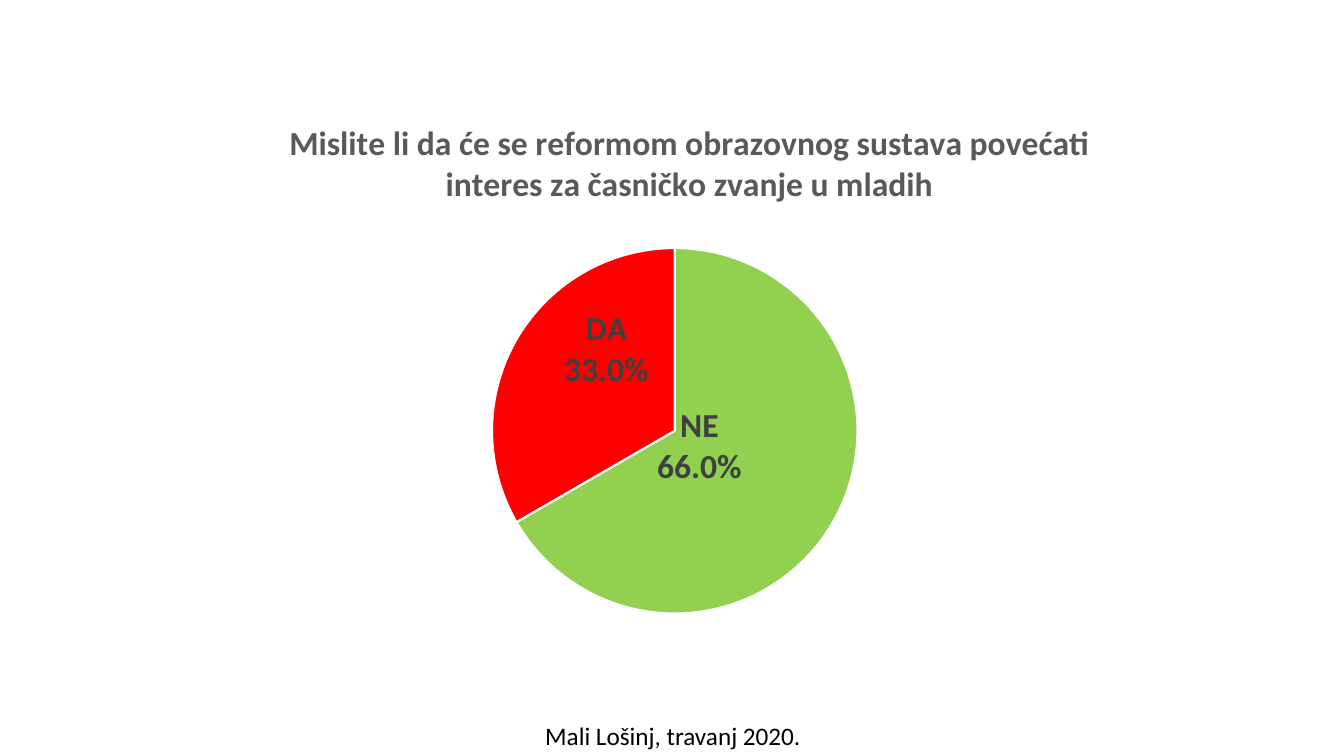
from lxml.etree import SubElement
from pptx import Presentation
from pptx.chart.data import CategoryChartData as ChartData
from pptx.dml.color import RGBColor
from pptx.enum.chart import XL_CHART_TYPE as ChartType, XL_LABEL_POSITION as LabelPosition
from pptx.enum.text import MSO_AUTO_SIZE as AutoSize
from pptx.oxml import parse_xml
from pptx.oxml.ns import nsdecls, qn
from pptx.util import Cm, Pt

BLACK = RGBColor(0x00, 0x00, 0x00)
WHITE = RGBColor(0xFF, 0xFF, 0xFF)
TITLE_GRAY = RGBColor(0x59, 0x59, 0x59)
LABEL_GRAY = RGBColor(0x40, 0x40, 0x40)
GREEN = RGBColor(0x92, 0xD0, 0x50)
RED = RGBColor(0xFF, 0x00, 0x00)

QUESTION = ("Mislite li da će se reformom obrazovnog sustava povećati "
            "interes za časničko zvanje u mladih")
# answer, share, slice colour, label offset as fractions of the chart
ANSWERS = [
    ("NE", 0.66, GREEN, (-0.05, -0.05)),
    ("DA", 0.33, RED, (0.01, -0.06)),
]


def manual_layout(**values):
    """Build a c:layout element from settings such as x, y, w and h."""
    layout = parse_xml(f"<c:layout {nsdecls('c')}><c:manualLayout/></c:layout>")
    for tag, value in values.items():
        SubElement(layout[0], qn(f"c:{tag}")).set("val", str(value))
    return layout


class SurveySlide:
    font_name = "Calibri"

    def __init__(self, presentation):
        self.slide = presentation.slides.add_slide(presentation.slide_layouts[6])

    def style(self, font, size, color, bold=False):
        font.name = self.font_name
        font.size = Pt(size)
        font.bold = bold
        font.color.rgb = color

    def add_run(self, paragraph, text, size, color, bold=False):
        run = paragraph.add_run()
        run.text = text
        self.style(run.font, size, color, bold)

    def add_pie(self, left, top, width, height, question, answers):
        data = ChartData(number_format="0.0%")
        data.categories = ["1", "2"]
        data.add_series("Series 1", [share for _, share, _, _ in answers])
        pie = self.slide.shapes.add_chart(
            ChartType.PIE, left, top, width, height, data).chart
        self.style(pie.font, 10, BLACK)
        pie.has_legend = False

        title = pie.chart_title
        self.add_run(title.text_frame.paragraphs[0], question, 24, TITLE_GRAY, True)
        title.include_in_layout = False
        title_xml = pie._chartSpace.chart.find(qn("c:title"))
        for old in title_xml.findall(qn("c:layout")):
            title_xml.remove(old)
        title_xml.find(qn("c:tx")).addnext(
            manual_layout(xMode="edge", yMode="edge", x=0.14, y=0.06))

        plot_area = pie._chartSpace.chart.plotArea
        for old in plot_area.findall(qn("c:layout")):
            plot_area.remove(old)
        plot_area.insert(0, manual_layout(
            layoutTarget="inner", xMode="edge", yMode="edge",
            x=0.332, y=0.289, w=0.336, h=0.625))

        plot = pie.plots[0]
        plot.vary_by_categories = True
        series = plot.series[0]
        labels = series.data_labels
        labels.show_value = True
        labels.number_format = "0.0%"
        labels.number_format_is_linked = False
        self.style(labels.font, 24, LABEL_GRAY, True)
        for index, answer in enumerate(answers):
            self.style_slice(series, index, *answer)

    def style_slice(self, series, index, answer, share, color, offset):
        point = series.points[index]
        point.format.fill.solid()
        point.format.fill.fore_color.rgb = color
        point.format.line.color.rgb = WHITE
        point.format.line.width = Pt(1.5)

        label = point.data_label
        frame = label.text_frame
        self.add_run(frame.paragraphs[0], answer, 24, LABEL_GRAY, True)
        self.add_run(frame.add_paragraph(), f"{share:.1%}", 24, LABEL_GRAY, True)
        label.position = LabelPosition.CENTER
        label_xml = series.data_labels._element.findall(qn("c:dLbl"))[index]
        label_xml.find(qn("c:idx")).addnext(
            manual_layout(x=offset[0], y=offset[1]))

    def add_text(self, left, top, width, height, text, size):
        frame = self.slide.shapes.add_textbox(left, top, width, height).text_frame
        frame.word_wrap = False
        frame.auto_size = AutoSize.SHAPE_TO_FIT_TEXT
        self.add_run(frame.paragraphs[0], text, size, BLACK)


def main():
    presentation = Presentation()
    presentation.slide_width = Cm(33.87)
    presentation.slide_height = Cm(19.05)
    survey = SurveySlide(presentation)
    survey.add_pie(Cm(3.3), Cm(1.98), Cm(27.41), Cm(14.76), QUESTION, ANSWERS)
    survey.add_text(Cm(13.49), Cm(18.03), Cm(7.01), Cm(1.02),
                    "Mali Lošinj, travanj 2020.", 18)
    presentation.save("out.pptx")


if __name__ == "__main__":
    main()
